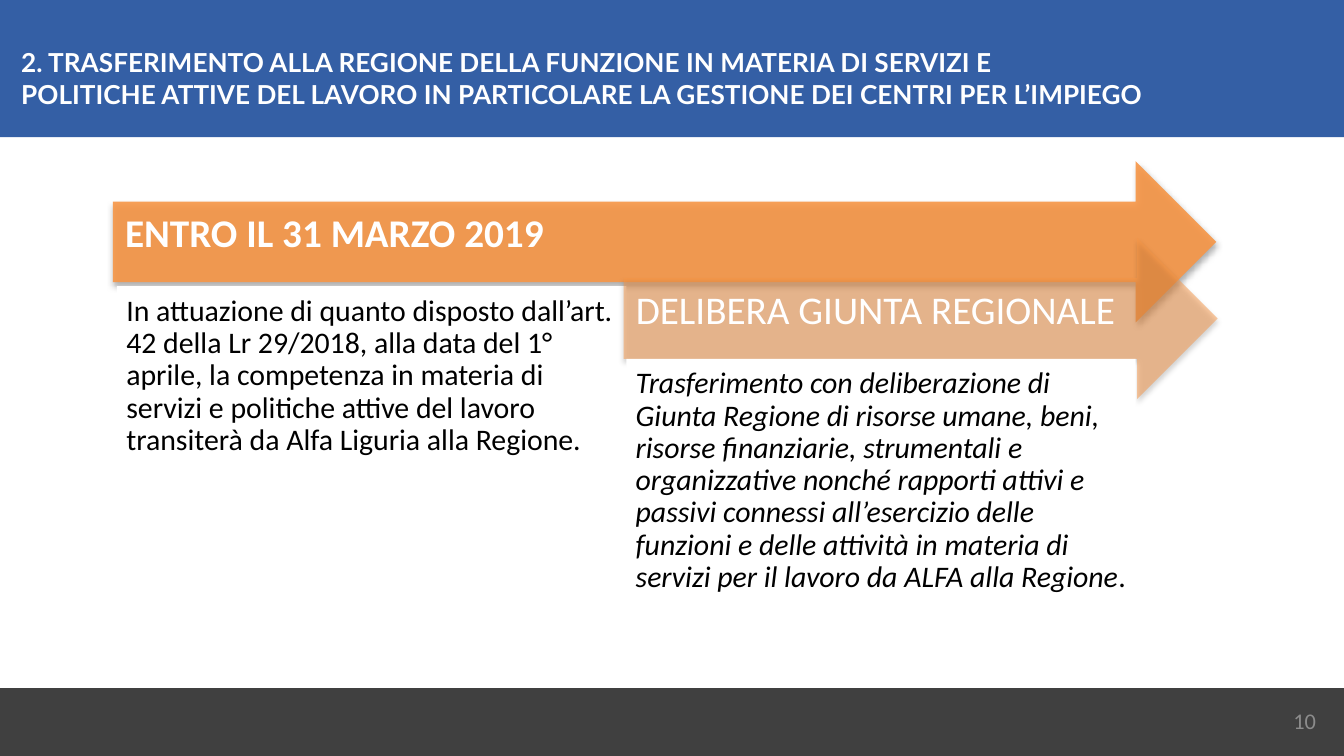
from lxml import etree
from pptx import Presentation
from pptx.dml.color import RGBColor
from pptx.enum.shapes import MSO_SHAPE
from pptx.enum.text import MSO_ANCHOR, PP_ALIGN
from pptx.oxml import parse_xml
from pptx.oxml.ns import nsdecls, qn
from pptx.util import Inches, Pt

RECTANGLE, ARROW = MSO_SHAPE.RECTANGLE, MSO_SHAPE.RIGHT_ARROW
TOP, MIDDLE = MSO_ANCHOR.TOP, MSO_ANCHOR.MIDDLE
LEFT, RIGHT = PP_ALIGN.LEFT, PP_ALIGN.RIGHT

WHITE = RGBColor(0xFF, 0xFF, 0xFF)
BLACK = RGBColor(0x00, 0x00, 0x00)
BLUE = RGBColor(0x34, 0x5F, 0xA5)
CHARCOAL = RGBColor(0x40, 0x40, 0x40)
ORANGE = RGBColor(0xF7, 0x96, 0x46)
GREY = RGBColor(0x8C, 0x8C, 0x8C)

PAGE_WIDTH = 10
PAGE_HEIGHT = PAGE_WIDTH * 9 / 16
BOX_INSETS = (0.1, 0.05, 0.1, 0.05)
ARROW_INSETS = (0.09, 0.09, 0.28, 0.19)
BODY_INSETS = (0.07, 0.07, 0.07, 0.07)


class SlideBuilder:
    """Holds the text style and the current page."""

    font = "Calibri"
    line_spacing = 0.9

    def __init__(self, page):
        self.page = page

    def shape(self, kind, area, color):
        shape = self.page.shapes.add_shape(kind, *map(Inches, area))
        shape.shadow.inherit = False
        shape.fill.solid()
        shape.fill.fore_color.rgb = color
        shape.line.fill.background()
        return shape

    def text(self, area, lines, size, color, font=None, bold=False,
             anchor=TOP, align=LEFT, insets=BOX_INSETS, spacing=None):
        """Each line is a list of (text, italic) runs."""
        box = self.page.shapes.add_textbox(*map(Inches, area))
        frame = box.text_frame
        frame.word_wrap = True
        frame.vertical_anchor = anchor
        (frame.margin_left, frame.margin_top,
         frame.margin_right, frame.margin_bottom) = map(Inches, insets)
        para = frame.paragraphs[0]
        para.alignment = align
        para.line_spacing = spacing
        for index, line in enumerate(lines):
            if index:
                para.add_line_break()
            for words, italic in line:
                span = para.add_run()
                span.text = words
                span.font.name = font or self.font
                span.font.size = Pt(size)
                span.font.bold = bold
                span.font.italic = italic
                span.font.color.rgb = color

    def arrow(self, area, label, opacity, bold=False):
        arrow = self.shape(ARROW, area, ORANGE)
        properties = arrow._element.spPr
        color = properties.find(qn("a:solidFill"))[0]
        etree.SubElement(color, qn("a:alpha"), val=str(opacity * 1000))
        properties.find(qn("a:effectLst")).append(parse_xml(
            f'<a:outerShdw {nsdecls("a")} blurRad="{Pt(3.1)}" dist="{Pt(1.8)}" '
            'dir="5400000" rotWithShape="0"><a:srgbClr val="000000">'
            '<a:alpha val="35000"/></a:srgbClr></a:outerShdw>'))
        self.text(area, [[(label, False)]], 21, WHITE, bold=bold, anchor=MIDDLE,
                  insets=ARROW_INSETS, spacing=self.line_spacing)

    def panel(self, area, runs):
        self.shape(RECTANGLE, area, WHITE)
        self.text(area, [runs], 16, BLACK, insets=BODY_INSETS,
                  spacing=self.line_spacing)


def main():
    deck = Presentation()
    deck.slide_width, deck.slide_height = Inches(PAGE_WIDTH), Inches(PAGE_HEIGHT)
    builder = SlideBuilder(deck.slides.add_slide(deck.slide_layouts[6]))

    # Footer and header bands
    builder.shape(RECTANGLE, (0, 5.12, PAGE_WIDTH, 0.51), CHARCOAL)
    builder.shape(RECTANGLE, (0, 0, 10.08, 1.02), BLUE)

    # Title
    builder.text(
        (0.06, 0.29, 9.94, 0.58),
        [[("2. TRASFERIMENTO ALLA REGIONE DELLA FUNZIONE IN MATERIA DI SERVIZI E ",
           False)],
         [("POLITICHE ATTIVE DEL LAVORO IN PARTICOLARE LA GESTIONE DEI CENTRI "
           "PER L’IMPIEGO", False)]],
        14, WHITE, font="Lato", bold=True, anchor=MIDDLE)

    # Deadline step
    builder.arrow((0.84, 1.2, 8.21, 1.2), "ENTRO IL 31 MARZO 2019", 90, bold=True)
    builder.panel((0.87, 2.13, 3.79, 2.67), [
        ("In attuazione di quanto disposto dall’art. 42 della Lr 29/2018, alla "
         "data del 1° aprile, la competenza in materia di servizi e politiche "
         "attive del lavoro transiterà da Alfa Liguria alla Regione.", False)])

    # Resolution step
    builder.arrow((4.64, 1.77, 4.42, 1.2), "DELIBERA GIUNTA REGIONALE", 50)
    builder.panel((4.66, 2.67, 3.79, 2.16), [
        ("Trasferimento con deliberazione di Giunta Regione di risorse umane, "
         "beni, risorse finanziarie, strumentali e organizzative nonché rapporti "
         "attivi e passivi connessi all’esercizio delle funzioni e delle attività "
         "in materia di servizi per il lavoro da ALFA alla Regione", True),
        (".", False)])

    # Page number
    builder.text((6.78, 5.21, 3.11, 0.3), [[("10", False)]], 12, GREY,
                 anchor=MIDDLE, align=RIGHT)

    deck.save("out.pptx")


if __name__ == "__main__":
    main()
